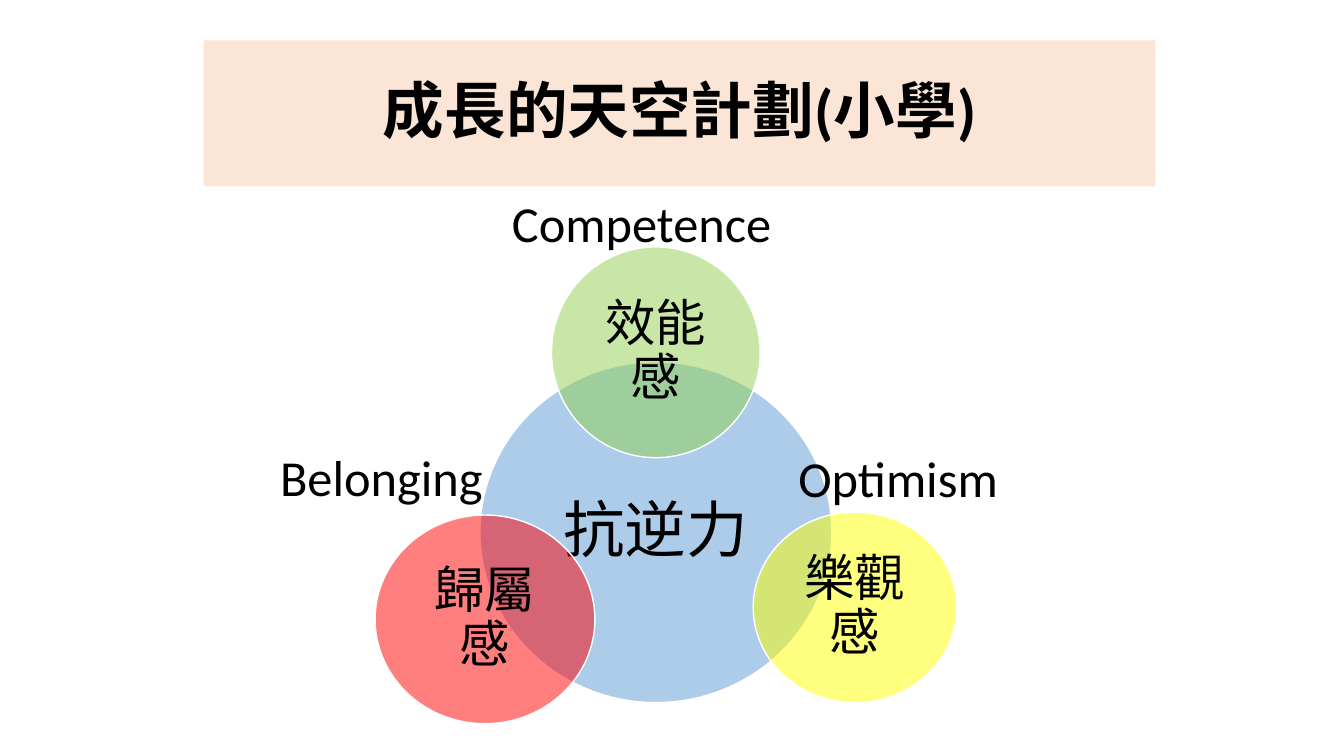
"""Build a slide of three overlapping circles around resilience."""
from lxml.etree import SubElement
from pptx import Presentation
from pptx.dml.color import RGBColor
from pptx.enum.shapes import MSO_SHAPE as Shape
from pptx.enum.text import MSO_ANCHOR as Anchor, MSO_AUTO_SIZE as AutoSize, PP_ALIGN as Align
from pptx.oxml.ns import qn
from pptx.util import Inches, Pt

COLUMNS, ROWS = 133.3, 75
WIDTH, HEIGHT = Inches(13.33), Inches(7.5)
BLACK = RGBColor(0x00, 0x00, 0x00)
WHITE = RGBColor(0xFF, 0xFF, 0xFF)
PEACH = RGBColor(0xFB, 0xE5, 0xD6)
BLUE = RGBColor(0x5B, 0x9B, 0xD5)
GREEN = RGBColor(0x92, 0xD0, 0x50)
YELLOW = RGBColor(0xFF, 0xFF, 0x00)
RED = RGBColor(0xFF, 0x00, 0x00)

CIRCLES = [
    ("抗逆力", 44, BLUE, (47.6, 35.9, 34.9, 33.8)),
    ("效能感", 36, GREEN, (54.7, 24.5, 20.7, 20.9)),
    ("樂觀感", 36, YELLOW, (74.7, 50.8, 20.2, 18.9)),
    ("歸屬感", 36, RED, (37.2, 51.1, 21.8, 20.7)),
]
LABELS = [
    ("Competence", (49.8, 18.6, 28, 7.1)),
    ("Belonging", (26.8, 43.8, 22.3, 7.1)),
    ("Optimism", (78.2, 43.9, 22, 7.1)),
]


def place(area):
    """Turn grid columns and rows into left, top, width and height."""
    left, top, width, height = area
    column, row = WIDTH / COLUMNS, HEIGHT / ROWS
    return [round(left * column), round(top * row), round(width * column), round(height * row)]


def set_all(target, values):
    """Set each named attribute on the target."""
    for name, value in values.items():
        setattr(target, name, value)


def write(box, text, size, frame_format, para_format, bold=False):
    """Write one formatted paragraph into a shape."""
    frame = box.text_frame
    set_all(frame, frame_format)
    para = frame.paragraphs[0]
    set_all(para, para_format)
    span = para.add_run()
    span.text = text
    set_all(span.font, {"name": "Calibri", "size": Pt(size), "bold": bold})
    span.font.color.rgb = BLACK


def add_title(page, text):
    """Fill the title placeholder as a tinted banner."""
    title = page.shapes.title
    set_all(title, dict(zip(("left", "top", "width", "height"), place((20.2, 4, 94.4, 14.5)))))
    title.fill.solid()
    title.fill.fore_color.rgb = PEACH
    write(title, text, 44,
          {"vertical_anchor": Anchor.MIDDLE, "auto_size": AutoSize.NONE, "word_wrap": True},
          {"alignment": Align.CENTER, "line_spacing": 0.9}, bold=True)


def add_circle(page, text, size, color, area):
    """Add a half-transparent circle with centred text."""
    circle = page.shapes.add_shape(Shape.OVAL, *place(area))
    circle.shadow.inherit = False
    circle.fill.solid()
    circle.fill.fore_color.rgb = color
    tint = circle.fill._xPr.find(qn("a:solidFill"))[0]
    SubElement(tint, qn("a:alpha"), val="50000")
    circle.line.color.rgb = WHITE
    circle.line.width = Pt(1)
    margins = dict.fromkeys(("margin_left", "margin_right", "margin_top", "margin_bottom"), Inches(0.05))
    write(circle, text, size,
          {"vertical_anchor": Anchor.MIDDLE, "word_wrap": True, **margins},
          {"alignment": Align.CENTER, "line_spacing": 0.9})


def add_label(page, text, area):
    """Add an unwrapped English label."""
    box = page.shapes.add_textbox(*place(area))
    write(box, text, 36,
          {"word_wrap": False, "auto_size": AutoSize.SHAPE_TO_FIT_TEXT},
          {"alignment": Align.LEFT})


def main():
    """Build and save the deck."""
    deck = Presentation()
    set_all(deck, {"slide_width": WIDTH, "slide_height": HEIGHT})
    page = deck.slides.add_slide(deck.slide_layouts.get_by_name("Title Only"))
    add_title(page, "成長的天空計劃(小學)")
    for circle in CIRCLES:
        add_circle(page, *circle)
    for label in LABELS:
        add_label(page, *label)
    deck.save("out.pptx")


if __name__ == "__main__":
    main()
